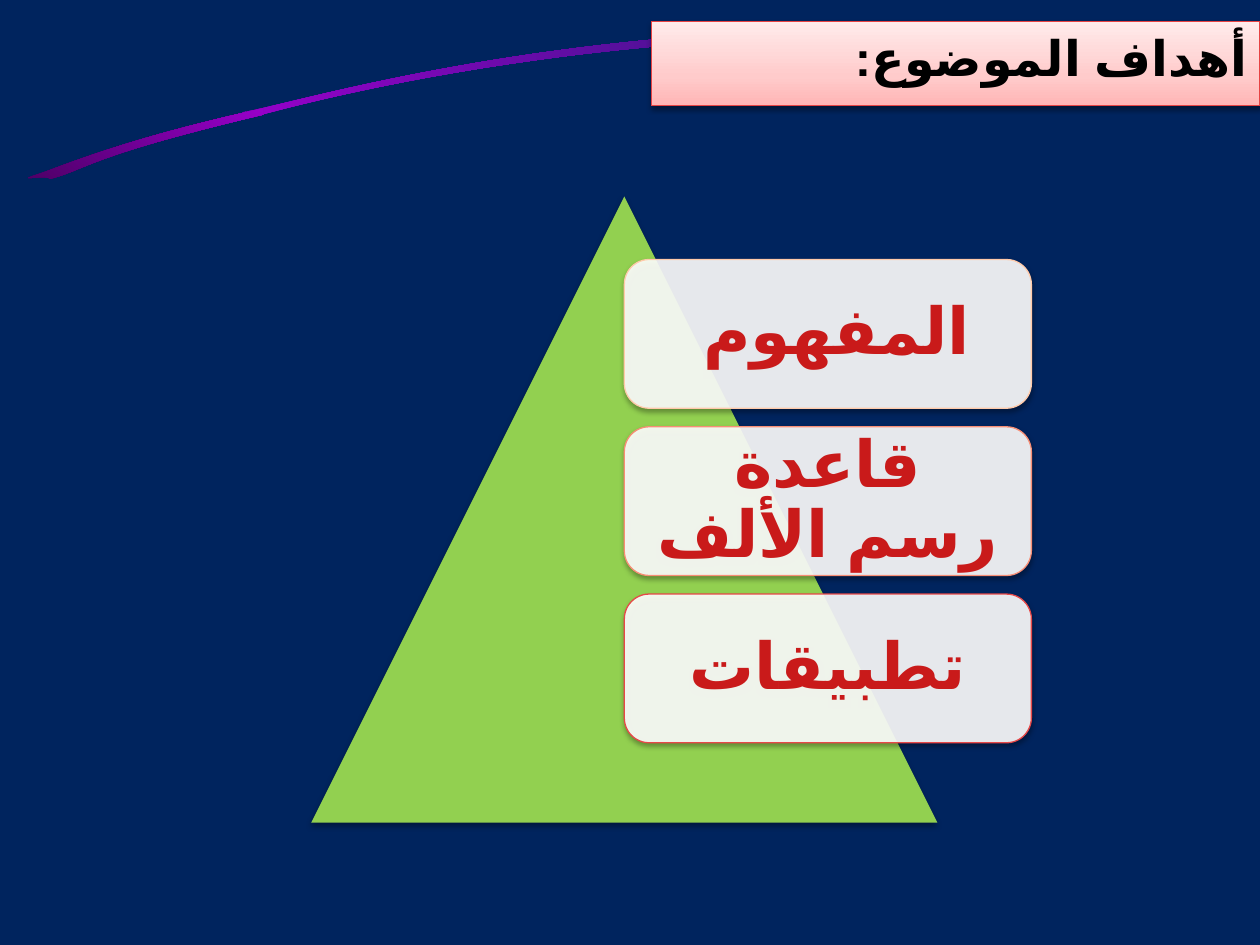
from dataclasses import dataclass
from math import cos, radians, sin

from lxml.etree import SubElement
from pptx import Presentation
from pptx.dml.color import RGBColor
from pptx.enum.lang import MSO_LANGUAGE_ID
from pptx.enum.shapes import MSO_SHAPE
from pptx.enum.text import MSO_ANCHOR, MSO_AUTO_SIZE, PP_ALIGN
from pptx.oxml.ns import qn
from pptx.util import Inches, Pt


@dataclass(frozen=True)
class Theme:
    back: str = "00245E"
    peak: str = "92D050"
    card: str = "FFFFFF"
    ink: str = "C91A1A"
    head: str = "000000"
    edge: str = "E64343"
    violet: str = "9900CC"
    plum: str = "47005E"
    font: str = "Arial"
    big: int = 37
    mid: int = 28
    thin: float = 0.75


LOOK = Theme()
WIDE, HIGH = 10, 7.5
SIDE = 4.97
LEFT, TOP = 2.47, 1.56
CARDS = [
    ("المفهوم ", "FFCAAA"),
    ("قاعدة رسم الألف", "F78E75"),
    ("تطبيقات", "E74848"),
]
SWOOSH = [
    ("moveTo", [(1.93, 0.89)]),
    ("cubicBezTo", [(2.37, 0.82), (4.77, 0.06), (8.06, 0.27)]),
    ("cubicBezTo", [(9.09, 0.35), (8.5, 0.74), (8.38, 0.79)]),
    ("lnTo", [(8.27, 0.79)]),
    ("cubicBezTo", [(8.37, 0.75), (9.09, 0.4), (8.05, 0.31)]),
    ("cubicBezTo", [(5.39, 0.17), (3.11, 0.62), (1.97, 0.94)]),
    ("close", []),
]
TAIL = [
    ("moveTo", [(2.09, 0.86)]),
    ("cubicBezTo", [(1.09, 1.08), (0.61, 1.27), (0.34, 1.37)]),
    ("cubicBezTo", [(0.06, 1.46), (0.35, 1.38), (0.4, 1.42)]),
    ("cubicBezTo", [(0.7, 1.34), (0.7, 1.24), (2.09, 0.91)]),
    ("close", []),
]


def tint(hue):
    return RGBColor.from_string(hue)


def node(root, tag, **attrs):
    return SubElement(root, qn("a:" + tag), {k: str(v) for k, v in attrs.items()})


def place(shape, box):
    shape.left, shape.top, shape.width, shape.height = map(Inches, box)


def paint(shape, hue, alpha=100):
    shape.fill.solid()
    shape.fill.fore_color.rgb = tint(hue)
    if alpha < 100:
        color = shape.fill._xPr.find(qn("a:solidFill"))[0]
        node(color, "alpha", val=alpha * 1000)


def blend(shape, stops, angle):
    shape.fill.gradient()
    grad = shape.fill._xPr.find(qn("a:gradFill"))
    for child in list(grad):
        grad.remove(child)
    ramp = node(grad, "gsLst")
    for spot, hue in stops:
        node(node(ramp, "gs", pos=spot * 1000), "srgbClr", val=hue)
    node(grad, "lin", ang=angle * 60000, scaled=0)


def border(shape, hue):
    shape.line.color.rgb = tint(hue)
    shape.line.width = Pt(LOOK.thin)


def shade(shape, alpha=35, drop=1.8):
    shape.shadow.inherit = False
    glow = shape._element.spPr.find(qn("a:effectLst"))
    cast = node(glow, "outerShdw", blurRad=Pt(3.1), dist=Pt(drop),
                dir=90 * 60000, rotWithShape=0)
    node(node(cast, "srgbClr", val="000000"), "alpha", val=alpha * 1000)


def write(shape, text, size, hue, align, anchor):
    frame = shape.text_frame
    frame.word_wrap = True
    frame.auto_size = MSO_AUTO_SIZE.NONE
    frame.vertical_anchor = anchor
    para = frame.paragraphs[0]
    para.alignment = align
    para._p.get_or_add_pPr().set("rtl", "1")
    run = para.add_run()
    run.text = text
    font = run.font
    font.size, font.bold, font.name = Pt(size), True, LOOK.font
    font.language_id = MSO_LANGUAGE_ID.ARABIC
    font.color.rgb = tint(hue)
    node(run._r.get_or_add_rPr(), "cs", typeface=LOOK.font)
    return para


def curve(slide, box, turn, steps, stops, angle):
    left, top, width, height = box
    midx, midy = left + width / 2, top + height / 2
    c, s = cos(radians(turn)), sin(radians(turn))

    def local(x, y):
        dx, dy = x - midx, y - midy
        return (Inches(width / 2 + dx * c + dy * s),
                Inches(height / 2 - dx * s + dy * c))

    pen = slide.shapes.build_freeform()
    pen.add_line_segments([(Inches(width), Inches(height))])
    shape = pen.convert_to_shape()
    place(shape, box)
    shape.rotation = turn
    trail = next(shape._element.iter(qn("a:path")))
    trail.set("w", str(Inches(width)))
    trail.set("h", str(Inches(height)))
    for child in list(trail):
        trail.remove(child)
    for kind, points in steps:
        step = node(trail, kind)
        for x, y in points:
            px, py = local(x, y)
            node(step, "pt", x=px, y=py)
    blend(shape, stops, angle)
    shape.line.fill.background()
    shape.shadow.inherit = False


def peak(slide):
    shape = slide.shapes.add_shape(
        MSO_SHAPE.ISOSCELES_TRIANGLE, *map(Inches, (LEFT, TOP, SIDE, SIDE)))
    paint(shape, LOOK.peak)
    shape.line.fill.background()
    shade(shape)


def card(slide, row, text, edge):
    width, height = SIDE * 0.65, 1.18
    box = (LEFT + SIDE / 2, TOP + 0.5 + row * height * 9 / 8, width, height)
    shape = slide.shapes.add_shape(MSO_SHAPE.ROUNDED_RECTANGLE, *map(Inches, box))
    paint(shape, LOOK.card, 90)
    border(shape, edge)
    shade(shape)
    para = write(shape, text, LOOK.big, LOOK.ink, PP_ALIGN.CENTER, MSO_ANCHOR.MIDDLE)
    para.line_spacing = 0.9
    frame = shape.text_frame
    frame.margin_left = frame.margin_right = Inches(0.15)
    frame.margin_top = frame.margin_bottom = Inches(0.15)


def title(slide, text):
    shape = slide.shapes.title
    place(shape, (5.17, 0.17, WIDE - 5.17, 0.67))
    node(node(shape._element.spPr, "prstGeom", prst="rect"), "avLst")
    blend(shape, [(0, "FFB5B5"), (35, "FFCBCB"), (100, "FFEBEB")], 270)
    border(shape, LOOK.edge)
    shade(shape, 38, 1.6)
    write(shape, text, LOOK.mid, LOOK.head, PP_ALIGN.RIGHT, MSO_ANCHOR.TOP)
    slide.shapes._spTree.append(shape._element)


def main():
    deck = Presentation()
    deck.slide_width, deck.slide_height = Inches(WIDE), Inches(HIGH)
    slide = deck.slides.add_slide(deck.slide_layouts[5])
    paint(slide.background, LOOK.back)
    curve(slide, (1.93, -0.04, 7.16, 1.25), 351.5, SWOOSH,
          [(0, LOOK.violet), (100, LOOK.back)], 0)
    curve(slide, (0.03, 0.99, 2.09, 0.34), 352.7, TAIL,
          [(0, LOOK.plum), (100, LOOK.violet)], 315)
    peak(slide)
    for row, (text, edge) in enumerate(CARDS):
        card(slide, row, text, edge)
    title(slide, "أهداف الموضوع:")
    deck.save("out.pptx")


if __name__ == "__main__":
    main()
